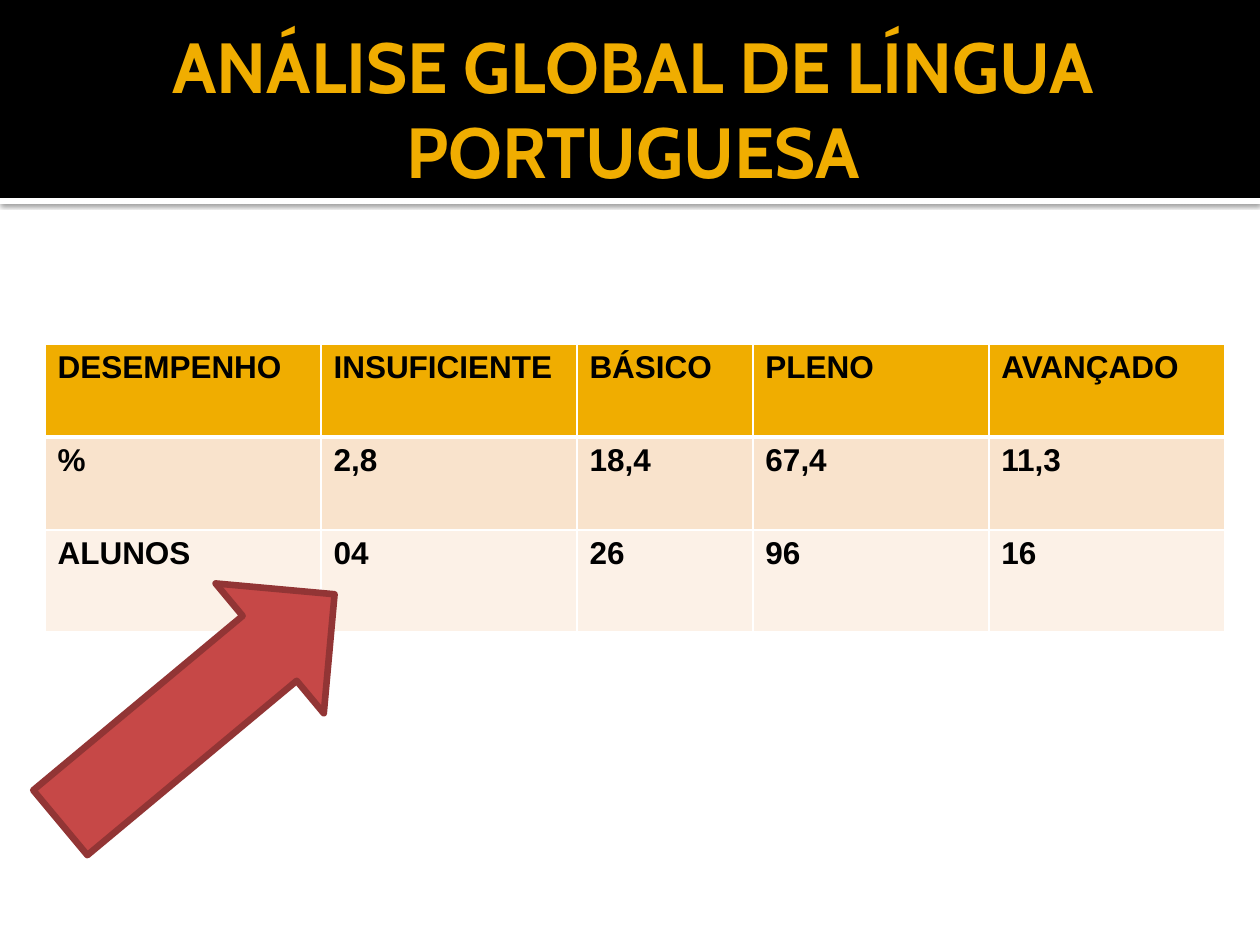
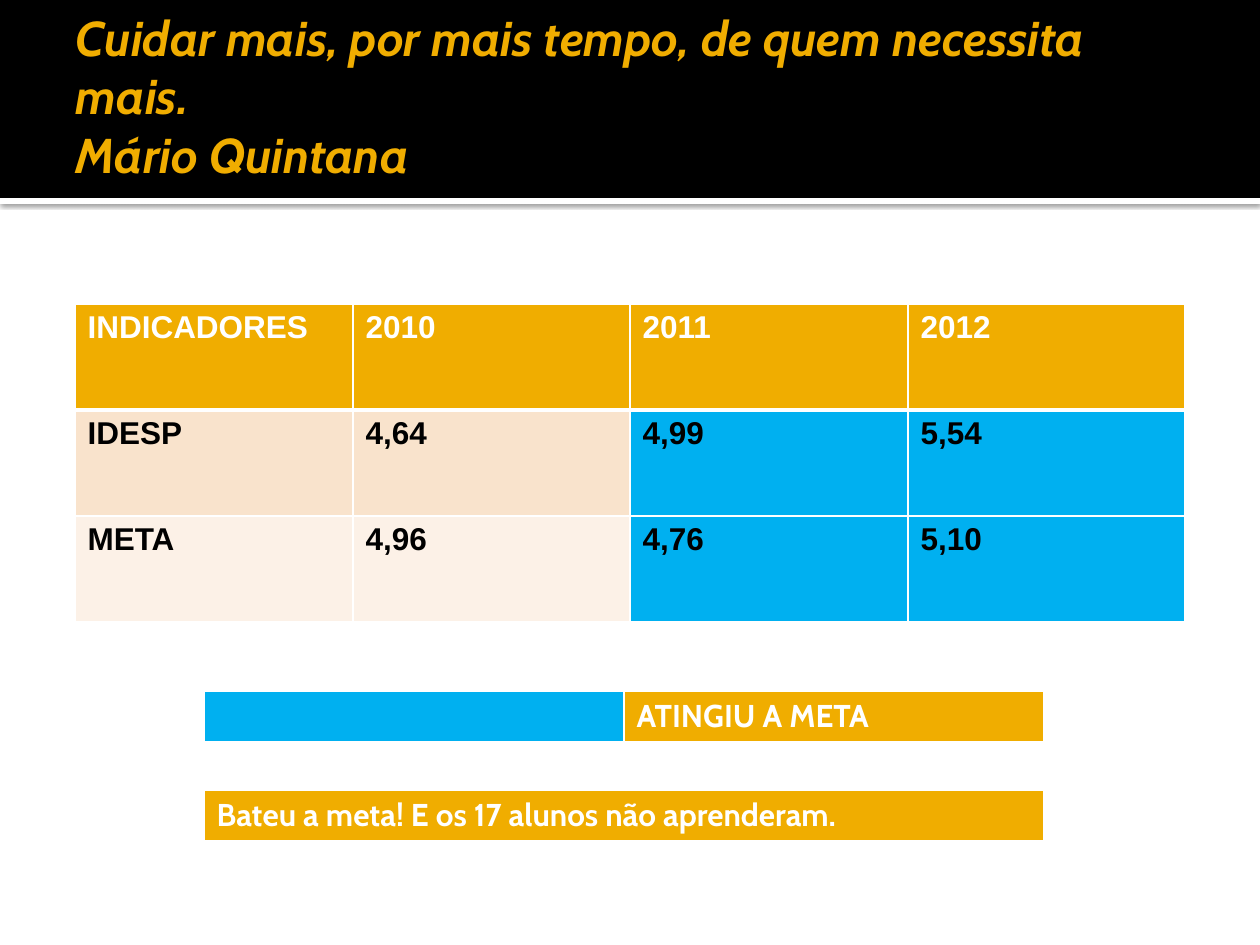
from lxml import etree
from pptx import Presentation
from pptx.dml.color import RGBColor
from pptx.enum.shapes import MSO_SHAPE as Shape
from pptx.enum.text import MSO_ANCHOR as Anchor, MSO_AUTO_SIZE as AutoSize, PP_ALIGN as Align
from pptx.oxml import parse_xml
from pptx.oxml.ns import nsdecls, qn
from pptx.util import Pt

PX = 914400 / 126
COLORS = {
    "black": "000000", "white": "FFFFFF", "gold": "F0AD00", "blue": "00B0F0",
    "peach": "F9E3CC", "cream": "FCF1E7", "red": "C64847", "dark_red": "923535",
}
ROW_FILLS = ("gold", "peach", "cream")
BAND_HEIGHT = 198

# Content
SLIDES = [
    {
        "title": "ANÁLISE GLOBAL DE LÍNGUA PORTUGUESA",
        "title_top": 21,
        "title_format": {"size": 40.5, "align": Align.CENTER},
        "tables": [
            {
                "at": (45, 344),
                "columns": (276, 256, 176, 236, 236),
                "heights": (93, 93, 102),
                "header_color": "black",
                "rows": [
                    ("DESEMPENHO", "INSUFICIENTE", "BÁSICO", "PLENO", "AVANÇADO"),
                    ("%", "2,8", "18,4", "67,4", "11,3"),
                    ("ALUNOS", "04", "26", "96", "16"),
                ],
            },
        ],
        "arrow": {"box": (19, 624, 357, 169), "rotation": 320.2},
    },
    {
        "title": "Cuidar mais, por mais tempo, de quem necessita mais.\vMário Quintana",
        "title_top": 9,
        "title_format": {"size": 27.9, "italic": True},
        "tables": [
            {
                "at": (75, 304),
                "columns": (278, 277, 278, 277),
                "heights": (106, 106, 106),
                "rows": [
                    ("INDICADORES", "2010", "2011", "2012"),
                    ("IDESP", "4,64", "4,99", "5,54"),
                    ("META", "4,96", "4,76", "5,10"),
                ],
                "blue_cells": {(1, 2), (1, 3), (2, 2), (2, 3)},
            },
            {
                "at": (204, 691),
                "columns": (420, 420),
                "heights": (52,),
                "font": "Cabin",
                "rows": [("", "ATINGIU A META")],
                "blue_cells": {(0, 0)},
            },
            {
                "at": (204, 790),
                "columns": (840,),
                "heights": (52,),
                "font": "Cabin",
                "rows": [("Bateu a meta! E os 17 alunos não aprenderam.",)],
            },
        ],
    },
]


def px(value):
    return round(value * PX)


def rgb(name):
    return RGBColor.from_string(COLORS[name])


def write_text(text_frame, text, font="Arial", size=18, color="black",
               bold=True, italic=False, align=Align.LEFT):
    text_frame.text = text
    for paragraph in text_frame.paragraphs:
        paragraph.alignment = align
        for run in paragraph.runs:
            run.font.name = font
            run.font.size = Pt(size)
            run.font.bold = bold
            run.font.italic = italic
            run.font.color.rgb = rgb(color)


def add_filled_shape(slide, kind, box, fill):
    shape = slide.shapes.add_shape(kind, *map(px, box))
    shape.shadow.inherit = False
    shape.fill.solid()
    shape.fill.fore_color.rgb = rgb(fill)
    shape.line.fill.background()
    return shape


def add_bands(slide):
    """Draw the header bands and hand them to the layout all slides share."""
    strip = add_filled_shape(slide, Shape.RECTANGLE, (0, BAND_HEIGHT, 1260, 6), "white")
    effects = strip.element.spPr.find(qn("a:effectLst"))
    effects.append(parse_xml(
        f'<a:outerShdw {nsdecls("a")} blurRad="{Pt(2.5)}" dist="{Pt(0.8)}" dir="5400000">'
        f'<a:srgbClr val="{COLORS["black"]}"><a:alpha val="60000"/></a:srgbClr></a:outerShdw>'))
    band = add_filled_shape(slide, Shape.RECTANGLE, (0, 0, 1260, BAND_HEIGHT), "black")
    layout_tree = slide.slide_layout.shapes.element
    for position, shape in enumerate((strip, band), start=2):
        layout_tree.insert(position, shape.element)


def add_title(slide, text, top, text_format):
    title = slide.shapes.title
    title.left, title.top, title.width, title.height = map(px, (63, top, 1134, 173))
    frame = title.text_frame
    frame.word_wrap = True
    frame.auto_size = AutoSize.NONE
    frame.vertical_anchor = Anchor.MIDDLE
    frame.margin_left = px(13)
    frame.margin_right = frame.margin_top = frame.margin_bottom = px(6)
    write_text(frame, text, font="Cabin", color="gold", **text_format)


def set_borders(cell, row):
    properties = cell._tc.get_or_add_tcPr()
    widths = {"L": 1, "R": 1, "T": 3 if row == 1 else 1, "B": 3 if row == 0 else 1}
    for side, width in widths.items():
        line = etree.SubElement(properties, qn(f"a:ln{side}"), w=str(Pt(width)))
        fill = etree.SubElement(line, qn("a:solidFill"))
        etree.SubElement(fill, qn("a:srgbClr"), val=COLORS["white"])


def add_table(slide, at, columns, heights, rows, font="Arial",
              header_color="white", blue_cells=()):
    box = (*at, sum(columns), sum(heights))
    table = slide.shapes.add_table(len(rows), len(columns), *map(px, box)).table
    for column, width in zip(table.columns, columns):
        column.width = px(width)
    for row, (height, texts) in enumerate(zip(heights, rows)):
        table.rows[row].height = px(height)
        for column, text in enumerate(texts):
            cell = table.cell(row, column)
            set_borders(cell, row)
            cell.fill.solid()
            cell.fill.fore_color.rgb = rgb("blue" if (row, column) in blue_cells
                                           else ROW_FILLS[row])
            write_text(cell.text_frame, text, font=font,
                       color="black" if row else header_color)


def add_arrow(slide, box, rotation):
    arrow = add_filled_shape(slide, Shape.RIGHT_ARROW, box, "red")
    arrow.rotation = rotation
    arrow.line.color.rgb = rgb("dark_red")
    arrow.line.width = Pt(3.78)


def main():
    presentation = Presentation()
    presentation.slide_width, presentation.slide_height = px(1260), px(945)
    layout = presentation.slide_layouts[5]

    for number, content in enumerate(SLIDES):
        slide = presentation.slides.add_slide(layout)
        if number == 0:
            add_bands(slide)
        add_title(slide, content["title"], content["title_top"], content["title_format"])
        for table in content["tables"]:
            add_table(slide, **table)
        if "arrow" in content:
            add_arrow(slide, **content["arrow"])

    presentation.save("out.pptx")


if __name__ == "__main__":
    main()
